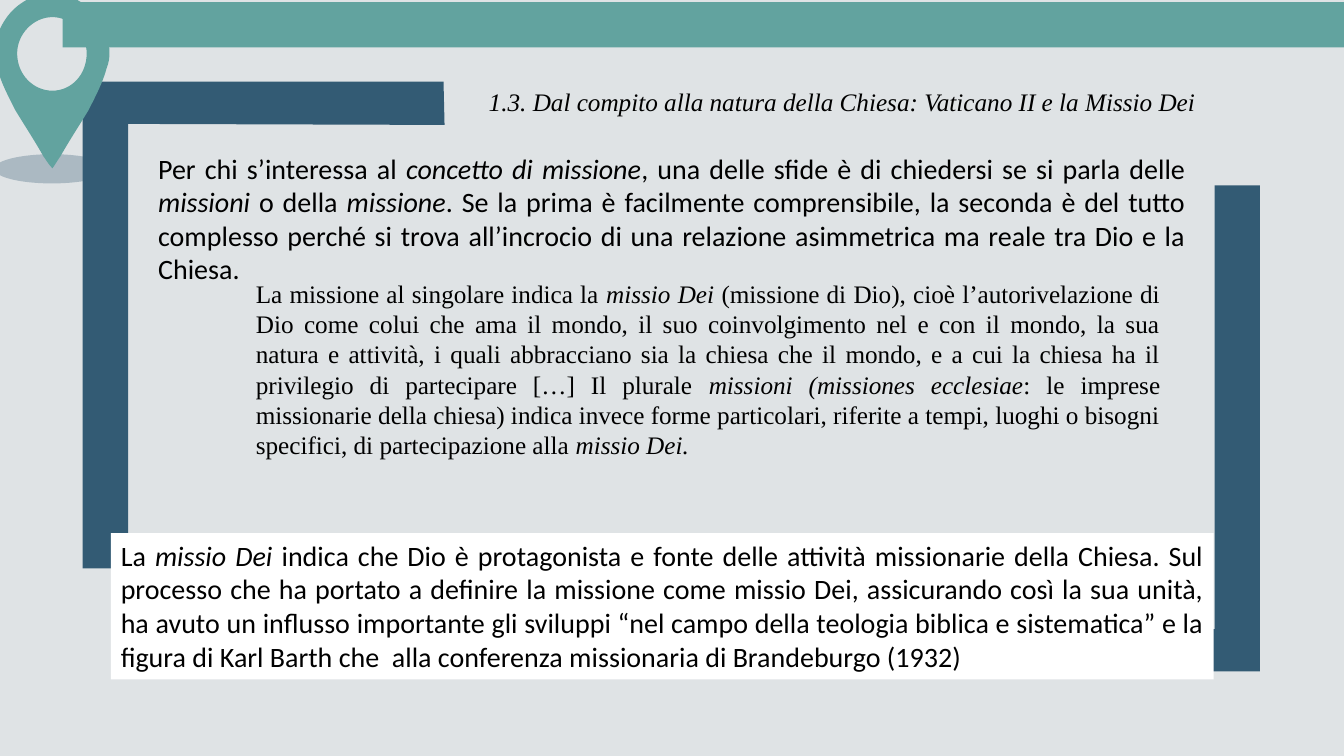
from lxml import etree
from pptx import Presentation
from pptx.dml.color import RGBColor
from pptx.enum.shapes import MSO_SHAPE
from pptx.enum.text import MSO_ANCHOR, MSO_AUTO_SIZE, PP_ALIGN
from pptx.oxml.ns import qn
from pptx.util import Inches, Pt

OVAL, RECT = MSO_SHAPE.OVAL, MSO_SHAPE.RECTANGLE
JUSTIFY, LEFT = PP_ALIGN.JUSTIFY, PP_ALIGN.LEFT
FIT, TOP = MSO_AUTO_SIZE.SHAPE_TO_FIT_TEXT, MSO_ANCHOR.TOP

GREY = RGBColor(0xDF, 0xE3, 0xE5)
NAVY = RGBColor(0x33, 0x5B, 0x74)
TEAL = RGBColor(0x62, 0xA3, 0x9F)
WHITE = RGBColor(0xFF, 0xFF, 0xFF)
BLACK = RGBColor(0x00, 0x00, 0x00)

TITLE = [("1.3. Dal compito alla natura della Chiesa: Vaticano II e la Missio Dei", True)]
INTRO = [
    ("Per chi s’interessa al ", False),
    ("concetto di missione", True),
    (", una delle sfide è di chiedersi se si parla delle ", False),
    ("missioni", True),
    (" o della ", False),
    ("missione", True),
    (". Se la prima è facilmente comprensibile, la seconda è del tutto complesso perché "
     "si trova all’incrocio di una relazione asimmetrica ma reale tra Dio e la Chiesa. ", False),
]
QUOTE = [
    ("La missione al singolare indica la ", False),
    ("missio Dei", True),
    (" (missione di Dio), cioè l’autorivelazione di Dio come colui che ama il mondo, il suo "
     "coinvolgimento nel e con il mondo, la sua natura e attività, i quali abbracciano sia la "
     "chiesa che il mondo, e a cui la chiesa ha il privilegio di partecipare […] Il plurale ", False),
    ("missioni (missiones ecclesiae", True),
    (": le imprese missionarie della chiesa) indica invece forme particolari, riferite a tempi, "
     "luoghi o bisogni specifici, di partecipazione alla ", False),
    ("missio Dei.", True),
]
CLOSING = [
    ("La ", False),
    ("missio Dei", True),
    (" indica che Dio è protagonista e fonte delle attività missionarie della Chiesa. Sul processo "
     "che ha portato a definire la missione come missio Dei, assicurando così la sua unità, ha "
     "avuto un influsso importante gli sviluppi “nel campo della teologia biblica e sistematica” e "
     "la figura di Karl Barth che  alla conferenza missionaria di Brandeburgo (1932)", False),
]

FRAMES = [
    [(12.05, 1.84), (12.5, 1.84), (12.5, 6.66), (8.92, 6.66), (8.92, 6.24), (12.05, 6.24)],
    [(1.27, 5.64), (0.82, 5.64), (0.82, 0.81), (4.4, 0.81), (4.41, 1.24), (1.27, 1.23)],
]
PIN_BOX = (-0.06, -0.06, 1.15, 1.73)
PIN_OUTLINE = [
    [(0.52, -0.06)],
    [(0.62, -0.06), (0.71, -0.04), (0.8, 0.02)],
    [(0.93, 0.1), (1.02, 0.22), (1.06, 0.36)],
    [(1.09, 0.46), (1.1, 0.57), (1.06, 0.67)],
    [(1.02, 0.82), (0.95, 0.95), (0.88, 1.09)],
    [(0.79, 1.24), (0.69, 1.39), (0.6, 1.55)],
    [(0.57, 1.59), (0.55, 1.63), (0.52, 1.67)],
    [(0.48, 1.63), (0.46, 1.59), (0.43, 1.55)],
    [(0.34, 1.39), (0.24, 1.24), (0.15, 1.09)],
    [(0.08, 0.95), (0.01, 0.82), (-0.03, 0.67)],
    [(-0.06, 0.57), (-0.05, 0.46), (-0.03, 0.36)],
    [(0.02, 0.22), (0.1, 0.1), (0.23, 0.02)],
    [(0.32, -0.04), (0.42, -0.06), (0.52, -0.06)],
]
PIN_HOLE = [
    [(0.52, 0.9)],
    [(0.33, 0.9), (0.17, 0.74), (0.17, 0.53)],
    [(0.17, 0.34), (0.33, 0.17), (0.52, 0.17)],
    [(0.71, 0.17), (0.86, 0.34), (0.86, 0.53)],
    [(0.86, 0.74), (0.71, 0.9), (0.52, 0.9)],
]


def paint(sp, color):
    sp.shadow.inherit = False
    sp.fill.solid()
    sp.fill.fore_color.rgb = color
    sp.line.fill.background()
    return sp


def add_outline(s, points, color):
    points = [(Inches(x), Inches(y)) for x, y in points]
    fb = s.shapes.build_freeform(*points[0])
    fb.add_line_segments(points[1:])
    return paint(fb.convert_to_shape(), color)


def add_curves(s, box, contours, color):
    x, y, w, h = box
    sp = add_outline(s, [(x, y), (x + w, y), (x + w, y + h), (x, y + h)], color)
    outline = next(sp._element.iter(qn("a:path")))
    for child in list(outline):
        outline.remove(child)
    for contour in contours:
        for i, points in enumerate(contour):
            step = etree.SubElement(outline, qn("a:cubicBezTo" if i else "a:moveTo"))
            for px, py in points:
                pt = etree.SubElement(step, qn("a:pt"))
                pt.set("x", str(Inches(px - x)))
                pt.set("y", str(Inches(py - y)))
        etree.SubElement(outline, qn("a:close"))
    return sp


def add_preset(s, kind, box, color):
    return paint(s.shapes.add_shape(kind, *map(Inches, box)), color)


def add_box(s, box):
    return s.shapes.add_textbox(*map(Inches, box))


def write(sp, runs, font, size, align=JUSTIFY, wrap=True):
    tf = sp.text_frame
    tf.word_wrap = wrap
    tf.auto_size = FIT
    tf.vertical_anchor = TOP
    p = tf.paragraphs[0]
    p.alignment = align
    p.font.name, p.font.size, p.font.color.rgb = font, Pt(size), BLACK
    for text, italic in runs:
        r = p.add_run()
        r.text = text
        r.font.italic = italic
    return p


def main():
    prs = Presentation()
    prs.slide_width, prs.slide_height = Inches(40 / 3), Inches(7.5)
    s = prs.slides.add_slide(prs.slide_layouts[6])
    s.background.fill.solid()
    s.background.fill.fore_color.rgb = GREY

    for frame in FRAMES:
        add_outline(s, frame, NAVY)

    pin_shadow = add_preset(s, OVAL, (-0.06, 1.53, 1.15, 0.29), NAVY)
    clr = next(pin_shadow._element.spPr.iter(qn("a:srgbClr")))
    etree.SubElement(clr, qn("a:alpha")).set("val", "30000")
    add_curves(s, PIN_BOX, [PIN_OUTLINE, PIN_HOLE], TEAL)
    add_preset(s, RECT, (0.62, 0.02, 12.72, 0.45), TEAL)

    write(add_box(s, (1.47, 1.45, 10.39, 1.78)), INTRO, "Calibri", 20)

    title = add_box(s, (4.25, 0.76, 7.79, 0.42))
    p = write(title, TITLE, "Times New Roman", 18, LEFT, False)
    p.level = 1
    p.line_spacing, p.space_before, p.space_after = 1.15, Pt(12), Pt(6)
    pPr = p._p.get_or_add_pPr()
    pPr.set("marL", str(Inches(0.5)))
    pPr.set("indent", "0")

    closing = add_preset(s, RECT, (1.1, 5.29, 10.94, 1.45), WHITE)
    write(closing, CLOSING, "Calibri", 20)
    write(add_box(s, (2.44, 2.71, 9.17, 1.92)), QUOTE, "Times New Roman", 18)

    prs.save("out.pptx")


if __name__ == "__main__":
    main()
